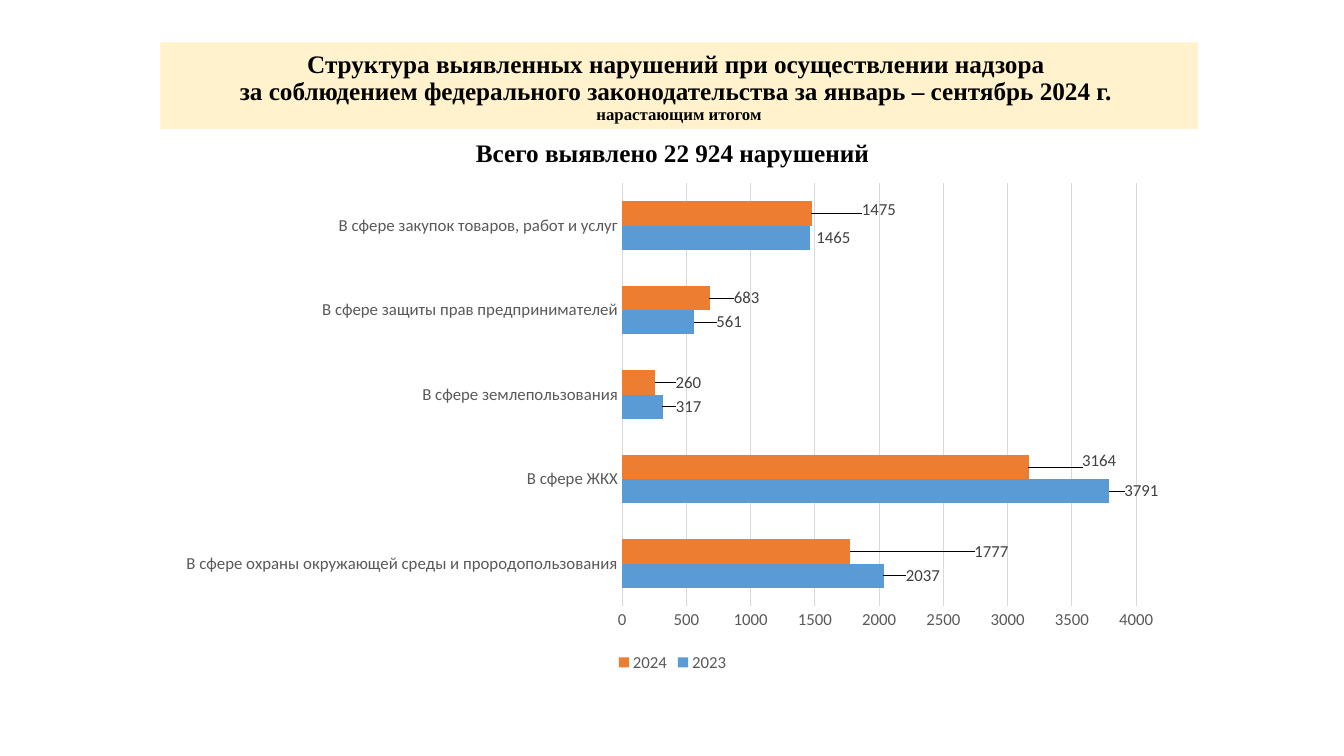
import lxml.etree
import pptx
import pptx.chart.data
import pptx.dml.color
import pptx.enum.chart
import pptx.enum.shapes
import pptx.enum.text
import pptx.oxml
import pptx.oxml.ns
import pptx.util

COLORS = {
    "banner": "FFF2CC", "title": "000000", "axis": "595959",
    "label": "404040", "grid": "D9D9D9", "2023": "5B9BD5", "2024": "ED7D31",
}


def style_font(font, name, size, color, bold=False):
    font.name = name
    font.size = pptx.util.Pt(size)
    font.bold = bold
    font.color.rgb = pptx.dml.color.RGBColor.from_string(COLORS[color])


def manual_layout(target=None, **shares):
    """Build a chart layout element from shares of the chart's size."""
    layout = pptx.oxml.parse_xml(
        f'<c:layout {pptx.oxml.ns.nsdecls("c")}><c:manualLayout/></c:layout>')
    settings = {"layoutTarget": target, "xMode": "edge", "yMode": "edge"} if target else {}
    for tag, value in {**settings, **shares}.items():
        node = lxml.etree.SubElement(layout[0], pptx.oxml.ns.qn(f"c:{tag}"))
        node.set("val", str(value))
    return layout


deck = pptx.Presentation()
deck.slide_width = pptx.util.Inches(13.33)
deck.slide_height = pptx.util.Inches(7.5)
slide = deck.slides.add_slide(deck.slide_layouts[6])

# Title banner
banner = slide.shapes.add_shape(
    pptx.enum.shapes.MSO_SHAPE.RECTANGLE,
    pptx.util.Inches(1.59), pptx.util.Inches(0.42),
    pptx.util.Inches(10.29), pptx.util.Inches(0.86))
banner.shadow.inherit = False
banner.fill.solid()
banner.fill.fore_color.rgb = pptx.dml.color.RGBColor.from_string(COLORS["banner"])
banner.line.fill.background()
banner.text_frame.word_wrap = True
banner.text_frame.vertical_anchor = pptx.enum.text.MSO_ANCHOR.BOTTOM
para = banner.text_frame.paragraphs[0]
para.alignment = pptx.enum.text.PP_ALIGN.CENTER
para.line_spacing = 0.9
title_lines = [
    ("Структура выявленных нарушений при осуществлении надзора ", 18),
    ("за соблюдением федерального законодательства за январь – сентябрь 2024 г. ", 18),
    ("нарастающим итогом", 12),
]
for index, (text, size) in enumerate(title_lines):
    if index:
        para.add_line_break()
    span = para.add_run()
    span.text = text
    style_font(span.font, "Times New Roman", size, "title", bold=True)

# Total under the banner
box = slide.shapes.add_textbox(
    pptx.util.Inches(1.67), pptx.util.Inches(1.37),
    pptx.util.Inches(10), pptx.util.Inches(0.36))
box.text_frame.word_wrap = True
para = box.text_frame.paragraphs[0]
para.text = "Всего выявлено 22 924 нарушений"
para.alignment = pptx.enum.text.PP_ALIGN.CENTER
para.line_spacing = 0.8
style_font(para.font, "Times New Roman", 18, "title", bold=True)

# Bar chart of violations by field
chart_data = pptx.chart.data.CategoryChartData()
chart_data.categories = [
    "В сфере охраны окружающей среды и прородопользования",
    "В сфере ЖКХ",
    "В сфере землепользования",
    "В сфере защиты прав предпринимателей",
    "В сфере закупок товаров, работ и услуг",
]
chart_data.add_series("2023", [2037, 3791, 317, 561, 1465])
chart_data.add_series("2024", [1777, 3164, 260, 683, 1475])
chart = slide.shapes.add_chart(
    pptx.enum.chart.XL_CHART_TYPE.BAR_CLUSTERED,
    pptx.util.Inches(1.67), pptx.util.Inches(1.72),
    pptx.util.Inches(10), pptx.util.Inches(4.99), chart_data).chart
style_font(chart.font, "Calibri", 10, "title")
chart.has_title = False
chart.has_legend = True
chart.legend.position = pptx.enum.chart.XL_LEGEND_POSITION.BOTTOM
chart.legend.include_in_layout = False
style_font(chart.legend.font, "Calibri", 12, "axis")

# Axes and plot area
for axis in (chart.category_axis, chart.value_axis):
    axis.major_tick_mark = pptx.enum.chart.XL_TICK_MARK.NONE
    axis.minor_tick_mark = pptx.enum.chart.XL_TICK_MARK.NONE
    axis.format.line.fill.background()
    style_font(axis.tick_labels.font, "Calibri", 12, "axis")
chart.value_axis.minimum_scale = 0
chart.value_axis.maximum_scale = 4000
chart.value_axis.major_unit = 500
grid_line = chart.value_axis.major_gridlines.format.line
grid_line.width = pptx.util.Pt(0.75)
grid_line.color.rgb = pptx.dml.color.RGBColor.from_string(COLORS["grid"])
plot_area = chart.element.find(".//" + pptx.oxml.ns.qn("c:plotArea"))
for layout in plot_area.findall(pptx.oxml.ns.qn("c:layout")):
    plot_area.remove(layout)
plot_area.insert(0, manual_layout("inner", x=0.45, y=0.02, w=0.51, h=0.84))

# Series, with label shifts in percent of the chart's width and height
label_shifts = {
    "2023": [(1.8, 0), (1.1, 0), (0.9, 0), (1.8, 0), (0.2, 0)],
    "2024": [(11.9, 0), (4.9, -1.2), (1.6, 0), (2, 0), (4.6, -0.8)],
}
plot = chart.plots[0]
plot.gap_width = 150
plot.overlap = 0
plot.vary_by_categories = False
for series in plot.series:
    series.format.fill.solid()
    series.format.fill.fore_color.rgb = pptx.dml.color.RGBColor.from_string(COLORS[series.name])
    series.data_labels.show_value = True
    labels = [series.points[index].data_label for index in range(5)]
    for label in [series.data_labels, *labels]:
        style_font(label.font, "Calibri", 12, "label")
        label.position = pptx.enum.chart.XL_LABEL_POSITION.OUTSIDE_END
    point_labels = series.data_labels._element.findall(pptx.oxml.ns.qn("c:dLbl"))
    for point_label, (right, down) in zip(point_labels, label_shifts[series.name]):
        point_label[0].addnext(manual_layout(x=right / 100, y=down / 100))

deck.save("out.pptx")
